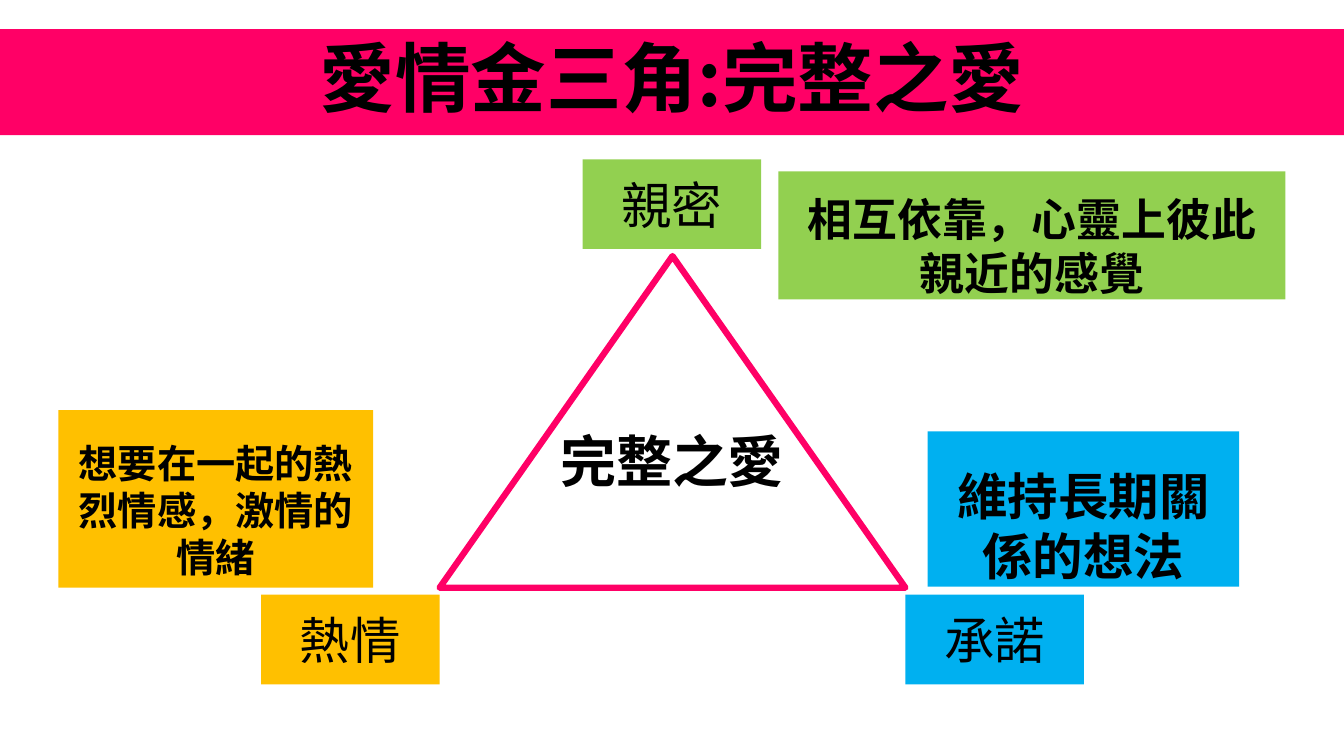
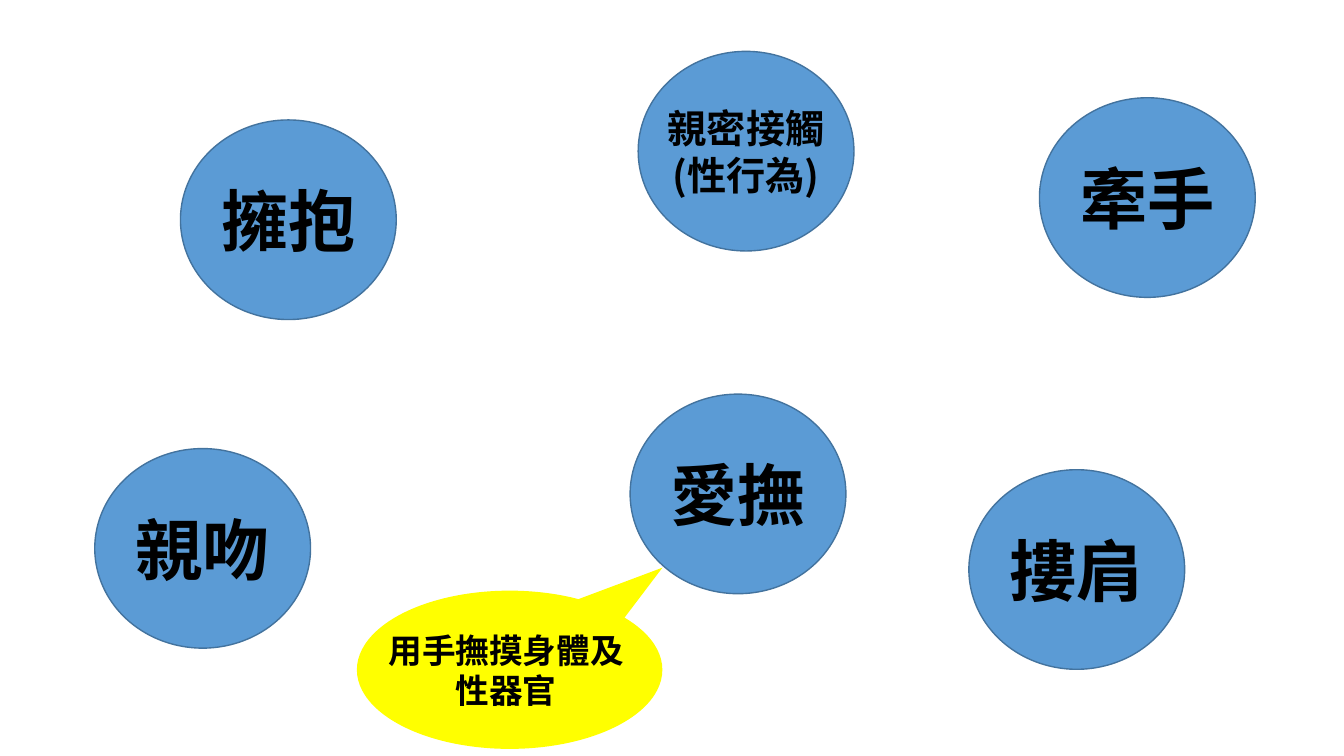
import dataclasses

import lxml.etree
import pptx
import pptx.dml.color
import pptx.enum.shapes
import pptx.enum.text
import pptx.oxml.ns
import pptx.util

Inches = pptx.util.Inches
Pt = pptx.util.Pt
Shape = pptx.enum.shapes.MSO_SHAPE
Anchor = pptx.enum.text.MSO_ANCHOR


@dataclasses.dataclass(frozen=True)
class Theme:
    font: str = "Noto Sans CJK SC"
    ink: str = "000000"
    pink: str = "FF0066"
    green: str = "92D050"
    amber: str = "FFC000"
    sky: str = "00B0F0"
    circle: str = "5B9BD5"
    circle_edge: str = "43739E"
    yellow: str = "FFFF00"
    title: int = 54
    contact: int = 48
    centre: int = 40
    label: int = 36
    meaning: int = 32
    small: int = 28
    note: int = 24
    leading: float = 1.2


THEME = Theme()
SLIDE_WIDTH, SLIDE_HEIGHT = 13.33, 7.5
LABEL_WIDTH, LABEL_HEIGHT = 1.77, 0.89
CIRCLE_WIDTH, CIRCLE_HEIGHT = 2.14, 1.98


def rgb(colour):
    return pptx.dml.color.RGBColor.from_string(colour)


def style_run(run, size, bold):
    run.font.name = THEME.font
    run.font.size = Pt(size)
    run.font.bold = bold
    run.font.color.rgb = rgb(THEME.ink)
    east_asian = lxml.etree.SubElement(
        run._r.get_or_add_rPr(), pptx.oxml.ns.qn("a:ea"))
    east_asian.set("typeface", THEME.font)


def write(shape, text, size, bold=True, spacing=None, anchor=Anchor.MIDDLE, wrap=True):
    frame = shape.text_frame
    frame.text = text
    frame.word_wrap = wrap
    frame.vertical_anchor = anchor
    for paragraph in frame.paragraphs:
        paragraph.alignment = pptx.enum.text.PP_ALIGN.CENTER
        paragraph.line_spacing = spacing
        for run in paragraph.runs:
            style_run(run, size, bold)


def leading(size):
    return Pt(size * THEME.leading)


def add_figure(slide, preset, box, fill=None, edge=None, edge_width=1):
    figure = slide.shapes.add_shape(preset, *map(Inches, box))
    figure.shadow.inherit = False
    if fill:
        figure.fill.solid()
        figure.fill.fore_color.rgb = rgb(fill)
    else:
        figure.fill.background()
    if edge:
        figure.line.color.rgb = rgb(edge)
        figure.line.width = Pt(edge_width)
    else:
        figure.line.fill.background()
    return figure


def add_caption(slide, box, text, size, spacing=None):
    caption = slide.shapes.add_textbox(*map(Inches, box))
    write(caption, text, size, spacing=spacing)


def add_title(slide, text):
    band = add_figure(slide, Shape.RECTANGLE, (0, 0.29, SLIDE_WIDTH, 1.05), THEME.pink)
    write(band, text, THEME.title, spacing=0.9)


def add_label(slide, left, top, text, fill):
    label = add_figure(
        slide, Shape.RECTANGLE, (left, top, LABEL_WIDTH, LABEL_HEIGHT), fill)
    write(label, text, THEME.label, bold=False)


def add_meaning(slide, box, text, size, fill, bottom_margin):
    meaning = add_figure(slide, Shape.RECTANGLE, box, fill)
    meaning.text_frame.margin_bottom = Inches(bottom_margin)
    write(meaning, text, size, spacing=leading(size), anchor=Anchor.BOTTOM)


def add_contact(slide, left, top, text, size=THEME.contact, spacing=None):
    contact = add_figure(
        slide, Shape.OVAL, (left, top, CIRCLE_WIDTH, CIRCLE_HEIGHT),
        THEME.circle, THEME.circle_edge)
    write(contact, text, size, spacing=spacing, wrap=False)


def add_note(slide, box, tip, text):
    bubble = add_figure(slide, Shape.OVAL_CALLOUT, box, THEME.yellow)
    bubble.adjustments[0], bubble.adjustments[1] = tip
    add_caption(slide, (3.7, 6.19, 2.64, 0.91), text, THEME.note, leading(THEME.note))


def build_triangle(slide):
    add_title(slide, "愛情金三角:完整之愛")
    add_figure(slide, Shape.ISOSCELES_TRIANGLE, (4.36, 2.54, 4.62, 3.29),
               edge=THEME.pink, edge_width=4.5)
    for left, top, text, fill in (
        (5.78, 1.58, "親密", THEME.green),
        (2.59, 5.9, "熱情", THEME.amber),
        (8.98, 5.9, "承諾", THEME.sky),
    ):
        add_label(slide, left, top, text, fill)
    add_caption(slide, (5.07, 4.18, 3.19, 0.77), "完整之愛", THEME.centre)
    for box, text, size, fill, bottom_margin in (
        ((7.72, 1.7, 5.03, 1.27), "相互依靠，心靈上彼此親近的感覺",
         THEME.meaning, THEME.green, 0),
        ((0.58, 4.07, 3.12, 1.76), "想要在一起的熱烈情感，激情的情緒",
         THEME.small, THEME.amber, 0.07),
        ((9.2, 4.28, 3.09, 1.54), "維持長期關係的想法",
         THEME.label, THEME.sky, 0.01),
    ):
        add_meaning(slide, box, text, size, fill, bottom_margin)


def build_contacts(slide):
    for left, top, text in (
        (1.79, 1.19, "擁抱"),
        (0.94, 4.45, "親吻"),
        (6.25, 3.91, "愛撫"),
        (9.61, 4.66, "摟肩"),
        (10.31, 0.97, "牽手"),
    ):
        add_contact(slide, left, top, text)
    add_contact(slide, 6.33, 0.51, "親密接觸\n(性行為)", THEME.small, leading(THEME.small))
    add_note(slide, (3.54, 5.86, 3.03, 1.57), (0.5, -0.645), "用手撫摸身體及性器官")


def main():
    deck = pptx.Presentation()
    deck.slide_width = Inches(SLIDE_WIDTH)
    deck.slide_height = Inches(SLIDE_HEIGHT)
    for build in (build_triangle, build_contacts):
        build(deck.slides.add_slide(deck.slide_layouts[6]))
    deck.save("out.pptx")


if __name__ == "__main__":
    main()
